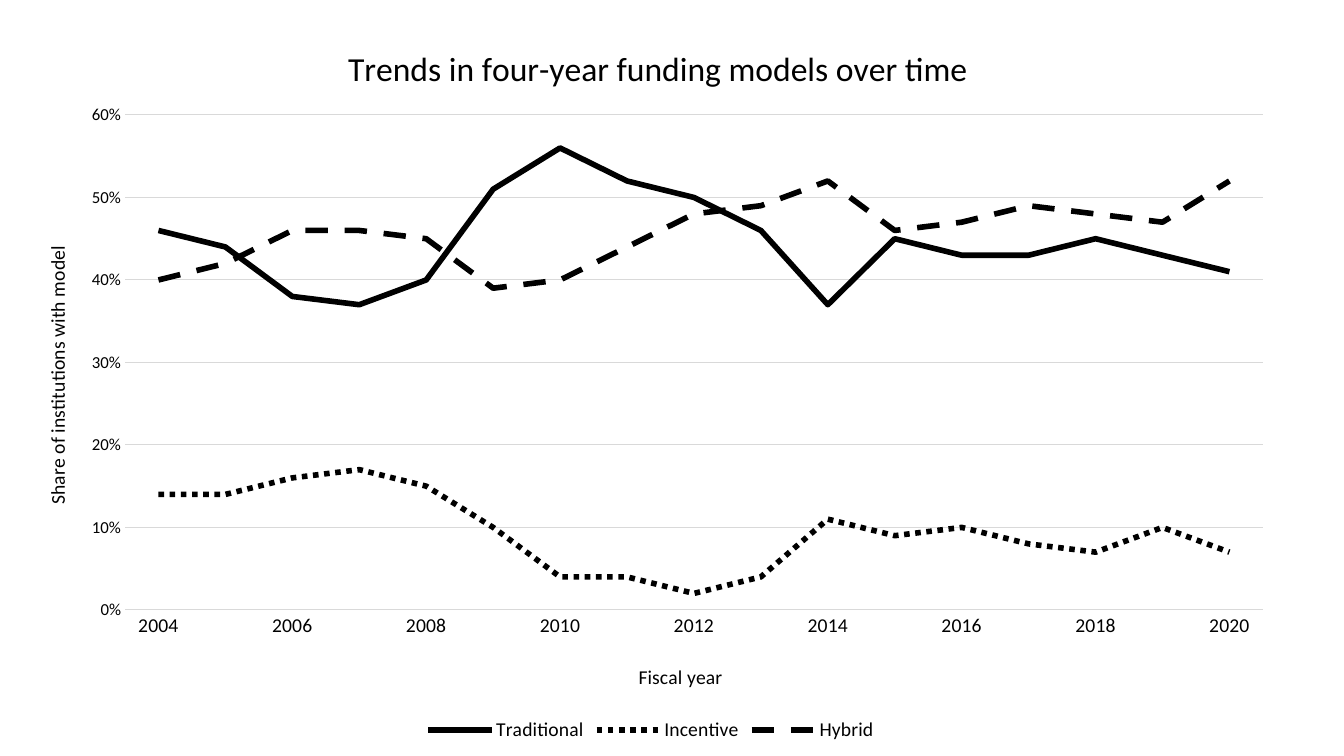
from lxml import etree
from pptx import Presentation
from pptx.chart.data import CategoryChartData
from pptx.dml.color import RGBColor
from pptx.enum.chart import XL_CHART_TYPE, XL_LEGEND_POSITION, XL_TICK_MARK
from pptx.enum.dml import MSO_LINE
from pptx.oxml.ns import qn
from pptx.util import Pt

LINE = XL_CHART_TYPE.LINE
BOTTOM = XL_LEGEND_POSITION.BOTTOM
NO_TICK = XL_TICK_MARK.NONE
DOT, DASH = MSO_LINE.ROUND_DOT, MSO_LINE.DASH
PX = 914400 / 100.8
FACE = "Calibri"
HUES = {"ink": "000000", "grid": "D9D9D9"}
LEFT, TOP, WIDE, HIGH = 14, 10, 1274, 736


def style(font, size):
    font.name = FACE
    font.size = Pt(size)
    font.bold = False
    font.color.rgb = RGBColor.from_string(HUES["ink"])


def place(part, x, y, w=None, h=None):
    """Fix a chart part at slide pixels x, y, with an inner size if given."""
    old = part.find(qn("c:layout"))
    if old is not None:
        part.remove(old)
    box = etree.Element(qn("c:layout"))
    man = etree.SubElement(box, qn("c:manualLayout"))
    rules = [("xMode", "edge"), ("yMode", "edge"),
             ("x", (x - LEFT) / WIDE), ("y", (y - TOP) / HIGH)]
    if w:
        rules.insert(0, ("layoutTarget", "inner"))
        rules += [("w", w / WIDE), ("h", h / HIGH)]
    for tag, val in rules:
        etree.SubElement(man, qn("c:" + tag)).set("val", str(val))
    part.insert(0 if part.find(qn("c:tx")) is None else 1, box)


deck = Presentation()
deck.slide_width, deck.slide_height = round(1344 * PX), round(756 * PX)
slide = deck.slides.add_slide(deck.slide_layouts[6])

# Data: only even years carry a label
data = CategoryChartData(number_format="0%")
data.categories = ["" if year % 2 else str(year) for year in range(2004, 2021)]
models = [
    ("Traditional", None, [46, 44, 38, 37, 40, 51, 56, 52, 50, 46, 37, 45, 43, 43, 45, 43, 41]),
    ("Incentive", DOT, [14, 14, 16, 17, 15, 10, 4, 4, 2, 4, 11, 9, 10, 8, 7, 10, 7]),
    ("Hybrid", DASH, [40, 42, 46, 46, 45, 39, 40, 44, 48, 49, 52, 46, 47, 49, 48, 47, 52]),
]
for name, dash, shares in models:
    data.add_series(name, [share / 100 for share in shares])

# Chart
spot = [round(n * PX) for n in (LEFT, TOP, WIDE, HIGH)]
chart = slide.shapes.add_chart(LINE, *spot, data).chart
style(chart.font, 10)

# Series lines
for line, (name, dash, shares) in zip(chart.plots[0].series, models):
    line.smooth = False
    line.format.line.width = Pt(4)
    line.format.line.color.rgb = RGBColor.from_string(HUES["ink"])
    if dash:
        line.format.line.dash_style = dash

# Axes
years, share = chart.category_axis, chart.value_axis
for axis, size in ((years, 14), (share, 12)):
    axis.major_tick_mark = axis.minor_tick_mark = NO_TICK
    style(axis.tick_labels.font, size)
share.minimum_scale, share.maximum_scale, share.major_unit = 0, 0.6, 0.1
share.tick_labels.number_format = "0%"
share.tick_labels.number_format_is_linked = False
share.format.line.fill.background()
share.has_major_gridlines = True
for rule in (years.format.line, share.major_gridlines.format.line):
    rule.width = Pt(0.75)
    rule.color.rgb = RGBColor.from_string(HUES["grid"])

# Titles
for host, text, size, x, y in (
    (chart, "Trends in four-year funding models over time", 24, 342, 40),
    (years, "Fiscal year", 14, 635, 660),
    (share, "Share of institutions with model", 14, 40, 242),
):
    host.has_title = True
    title = host.chart_title if host is chart else host.axis_title
    run = title.text_frame.paragraphs[0].add_run()
    run.text = text
    style(run.font, size)
    place(title._element, x, y)
share.axis_title.text_frame._txBody.bodyPr.set("rot", "-5400000")

# Legend and plot area
chart.has_legend = True
chart.legend.position = BOTTOM
chart.legend.include_in_layout = False
style(chart.legend.font, 14)
place(chart._chartSpace.chart.plotArea, 125, 115, 1138, 495)

deck.save("out.pptx")
